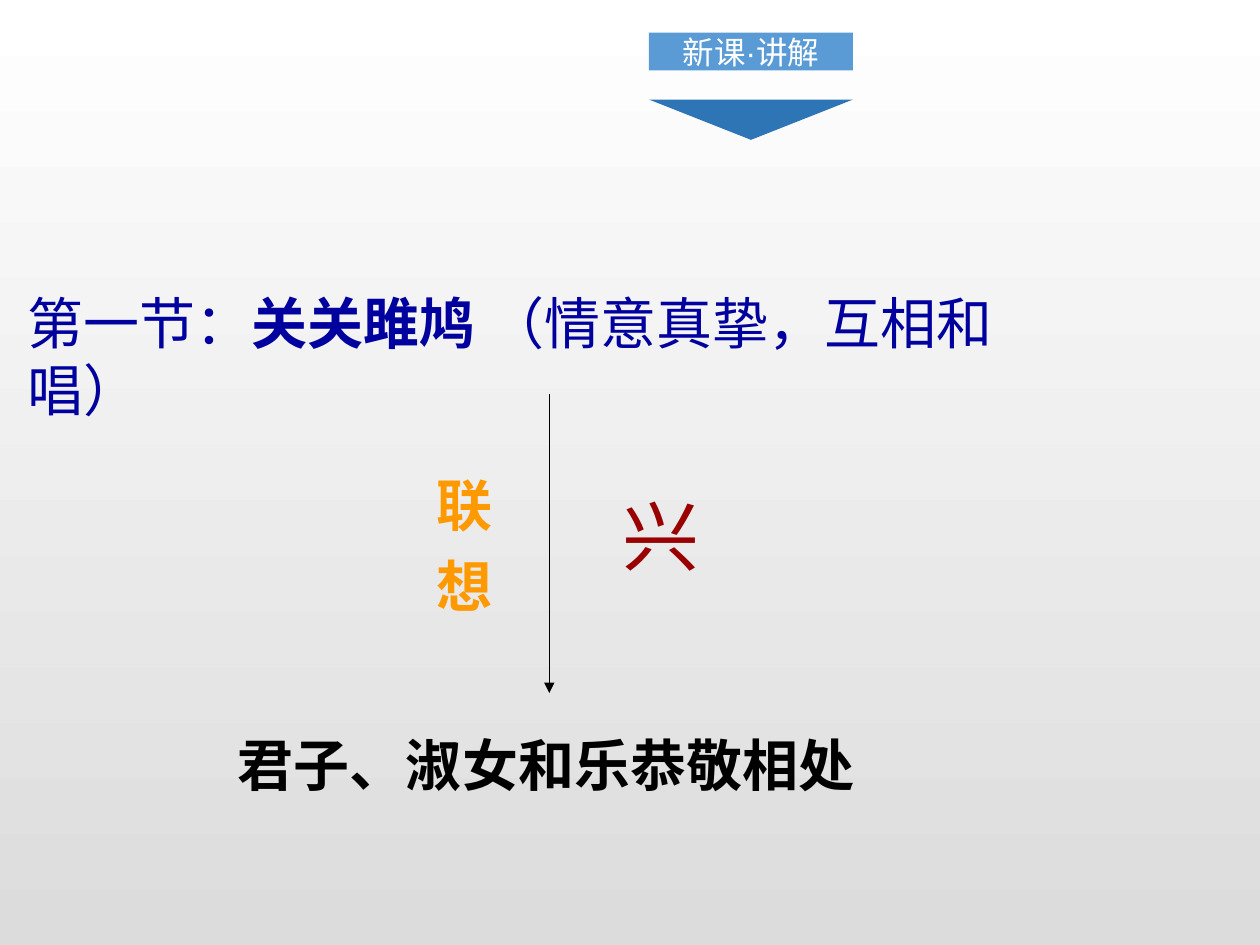
import pptx
import pptx.util
import pptx.dml.color
import pptx.enum.shapes
import pptx.enum.text
import pptx.oxml
import pptx.oxml.ns

Inches = pptx.util.Inches
SHAPES = pptx.enum.shapes.MSO_SHAPE
CJK_FONT = "Noto Sans CJK SC"


def color(hex_string):
    return pptx.dml.color.RGBColor.from_string(hex_string)


def add_child(parent, tag):
    child = pptx.oxml.parse_xml(f"<{tag} {pptx.oxml.ns.nsdecls('a')}/>")
    parent.append(child)
    return child


def add_span(para, text, size, hex_color, bold=False, font="Arial", spacing=0):
    """Add one run; spacing is extra letter spacing in points."""
    span = para.add_run()
    span.text = text
    span.font.size = pptx.util.Pt(size)
    span.font.bold = bold
    span.font.name = font
    span.font.color.rgb = color(hex_color)
    properties = span.font._element
    add_child(properties, "a:ea").set("typeface", CJK_FONT)
    if spacing:
        properties.set("spc", str(spacing * 100))


def add_text(page, left, top, width, height, vertical=False):
    """Add a text box that grows with its text and return its paragraph."""
    box = page.shapes.add_textbox(
        Inches(left), Inches(top), Inches(width), Inches(height))
    frame = box.text_frame
    frame.word_wrap = True
    frame.auto_size = pptx.enum.text.MSO_AUTO_SIZE.SHAPE_TO_FIT_TEXT
    if vertical:
        frame._txBody.bodyPr.set("vert", "eaVert")
    return frame.paragraphs[0]


def add_block(page, kind, top, height, hex_fill):
    """Add one part of the section marker; all parts share a column."""
    block = page.shapes.add_shape(
        kind, Inches(5.15), Inches(top), Inches(1.62), Inches(height))
    block.shadow.inherit = False
    block.fill.solid()
    block.fill.fore_color.rgb = color(hex_fill)
    block.line.fill.background()
    return block


def add_marker(page):
    label = add_block(page, SHAPES.RECTANGLE, 0.26, 0.3, "5B9BD5")
    frame = label.text_frame
    frame.margin_left = frame.margin_right = 0
    frame.margin_top = frame.margin_bottom = 0
    frame.vertical_anchor = pptx.enum.text.MSO_ANCHOR.MIDDLE
    para = frame.paragraphs[0]
    para.alignment = pptx.enum.text.PP_ALIGN.CENTER
    add_span(para, "新课·讲解", 18, "FFFFFF")
    pointer = add_block(page, SHAPES.ISOSCELES_TRIANGLE, 0.79, 0.32, "2E75B6")
    pointer.rotation = 180


def add_arrow(page, x, top, bottom):
    arrow = page.shapes.add_connector(
        pptx.enum.shapes.MSO_CONNECTOR.STRAIGHT,
        Inches(x), Inches(top), Inches(x), Inches(bottom))
    arrow.line.color.rgb = color("000000")
    arrow.line.width = pptx.util.Pt(0.75)
    add_child(arrow.line._get_or_add_ln(), "a:tailEnd").set("type", "triangle")
    add_child(arrow._element.spPr, "a:effectLst")


def set_background(page, *hex_colors):
    fill = page.background.fill
    fill.gradient()
    fill.gradient_angle = 270
    for stop, hex_color in zip(fill.gradient_stops, hex_colors):
        stop.color.rgb = color(hex_color)


def main():
    deck = pptx.Presentation()
    deck.slide_width, deck.slide_height = Inches(10), Inches(7.5)
    page = deck.slides.add_slide(deck.slide_layouts[6])
    set_background(page, "FFFFFF", "DCDCDC")

    # Verse and its reading
    verse = add_text(page, 0.12, 2.24, 8.69, 0.64)
    for text, bold in (("第一节：", False), ("关关雎鸠", True),
                       (" （情意真挚，互相和唱）", False)):
        add_span(verse, text, 32, "00009E", bold, CJK_FONT)

    # What the verse leads to
    meaning = add_text(page, 1.79, 5.75, 5.59, 0.64)
    add_span(meaning, "君子、淑女和乐恭敬相处", 32, "000000", True)
    add_arrow(page, 4.36, 3.13, 5.5)

    # Vertical labels beside the arrow
    association = add_text(page, 3.25, 3.69, 0.74, 1.42, vertical=True)
    for text, spacing in (("联", 0), (" ", 7), ("想", 0)):
        add_span(association, text, 32, "FF9900", True, spacing=spacing)
    device = add_text(page, 4.7, 3.85, 0.94, 0.79, vertical=True)
    add_span(device, "兴", 44, "990000")

    # Section marker
    add_marker(page)
    deck.save("out.pptx")


if __name__ == "__main__":
    main()
